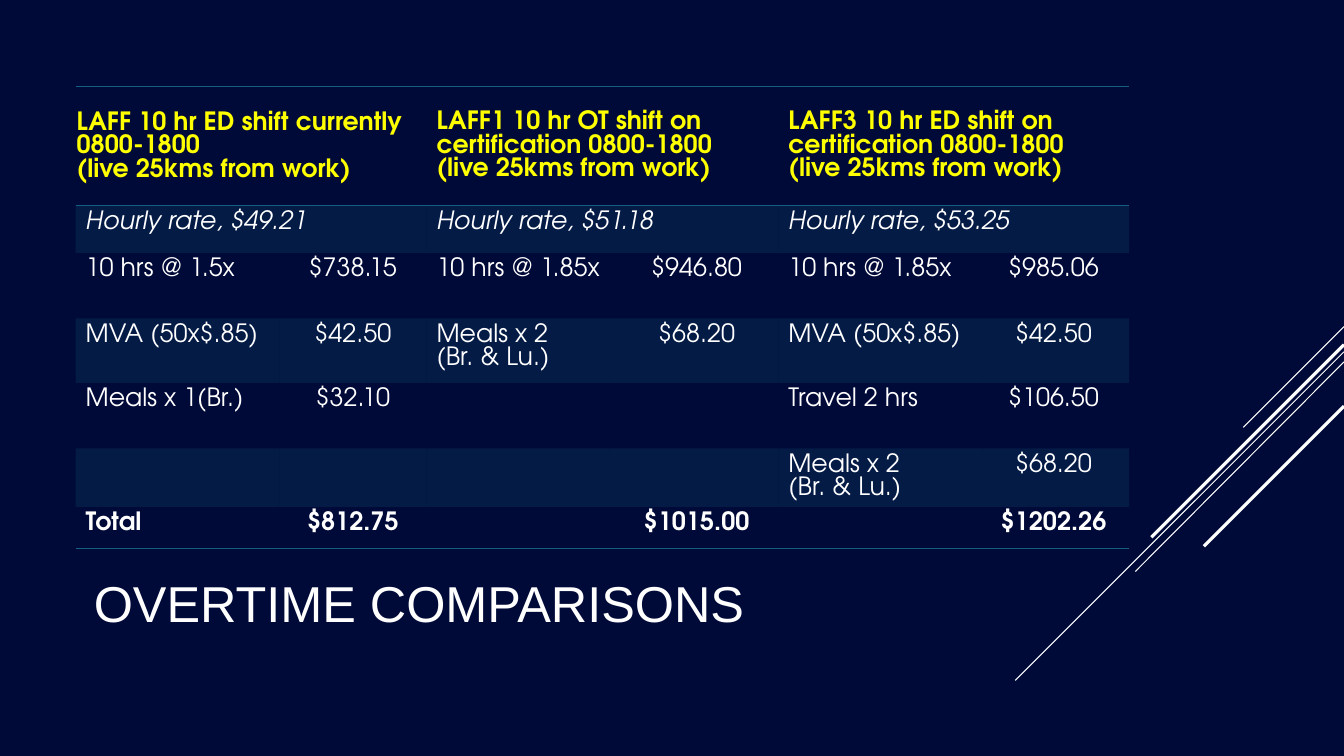
import pptx
import pptx.util
import pptx.dml.color
import pptx.enum.shapes
import pptx.enum.text
import pptx.oxml.ns
from lxml import etree

Inches, Pt = pptx.util.Inches, pptx.util.Pt
RGBColor = pptx.dml.color.RGBColor
ALIGN = pptx.enum.text.PP_ALIGN
MIDDLE = pptx.enum.text.MSO_ANCHOR.MIDDLE
qn = pptx.oxml.ns.qn

NAVY = RGBColor(0x00, 0x0A, 0x38)
WHITE = RGBColor(0xFF, 0xFF, 0xFF)
YELLOW = RGBColor(0xFF, 0xFF, 0x00)
TEAL = RGBColor(0x15, 0x60, 0x82)
NO_STYLE = "{2D5ABB26-0587-4C30-8999-92F81FD0307C}"

# Start, end and width of each diagonal line
DIAGONALS = [
    ((13.33, 3.24), (12.33, 4.24), 0.75),
    ((13.33, 3.49), (10.07, 6.75), 0.75),
    ((13.33, 3.59), (11.26, 5.67), 0.75),
    ((13.33, 3.42), (11.42, 5.33), 2.25),
    ((13.33, 4.03), (11.94, 5.42), 2.25),
]

COLUMN_WIDTHS = [2.02, 1.46, 1.87, 1.62, 1.98, 1.5]
ROW_HEIGHTS = [1.18, 0.47, 0.65, 0.64, 0.65, 0.58, 0.41]
DISTANCE = "(live 25kms from work)"
PAY_ROWS = [
    ["LAFF 10 hr ED shift currently 0800-1800 \n" + DISTANCE, "",
     "LAFF1 10 hr OT shift on certification 0800-1800 \n" + DISTANCE, "",
     "LAFF3 10 hr ED shift on certification 0800-1800 \n" + DISTANCE, ""],
    ["Hourly rate, $49.21", "", "Hourly rate, $51.18", "", "Hourly rate, $53.25", ""],
    ["10 hrs @ 1.5x", "$738.15", "10 hrs @ 1.85x", "$946.80", "10 hrs @ 1.85x", "$985.06"],
    ["MVA (50x$.85)", "$42.50", "Meals x 2 \n(Br. & Lu.)", "$68.20", "MVA (50x$.85)", "$42.50"],
    ["Meals x 1(Br.)", "$32.10", "", "", "Travel 2 hrs", "$106.50"],
    ["", "", "", "", "Meals x 2 \n(Br. & Lu.)", "$68.20"],
    ["Total", "$812.75", "", "$1015.00", "", "$1202.26"],
]
HEADER, RATE, TOTAL = 0, 1, len(PAY_ROWS) - 1


class SlideBuilder:
    title_font, table_font = "Arial", "TeX Gyre Adventor"
    title_size, table_size, line_pitch = Pt(36), Pt(18), Pt(16.8)

    def __init__(self, slide):
        self.slide = slide
        slide.background.fill.solid()
        slide.background.fill.fore_color.rgb = NAVY

    def add_text(self, paragraph, text, font, size, color, bold=False, italic=False):
        for index, line in enumerate(text.split("\n")):
            if index:
                paragraph.add_line_break()
            run = paragraph.add_run()
            run.text = line
            run.font.name, run.font.size = font, size
            run.font.bold, run.font.italic = bold, italic
            run.font.color.rgb = color

    def diagonal(self, start, end, width):
        line = self.slide.shapes.add_connector(
            pptx.enum.shapes.MSO_CONNECTOR.STRAIGHT,
            *(Inches(value) for value in start + end))
        line.line.color.rgb = WHITE
        line.line.width = Pt(width)
        etree.SubElement(line.element.spPr, qn("a:effectLst"))

    def title(self, text, left, top, width, height):
        heading = self.slide.shapes.title
        heading.left, heading.top = Inches(left), Inches(top)
        heading.width, heading.height = Inches(width), Inches(height)
        frame = heading.text_frame
        frame.word_wrap = True
        frame.vertical_anchor = MIDDLE
        frame.paragraphs[0].alignment = ALIGN.LEFT
        self.add_text(frame.paragraphs[0], text, self.title_font, self.title_size, WHITE)

    def band(self, cell):
        """Fill a cell with translucent teal."""
        cell.fill.solid()
        cell.fill.fore_color.rgb = TEAL
        color = next(cell._tc.tcPr.iter(qn("a:srgbClr")))
        etree.SubElement(color, qn("a:alpha"), val="20000")

    def border(self, cell, sides):
        properties = cell._tc.get_or_add_tcPr()
        for position, side in enumerate(sides):
            line = etree.Element(qn("a:ln" + side), w=str(Pt(1)))
            fill = etree.SubElement(line, qn("a:solidFill"))
            etree.SubElement(fill, qn("a:srgbClr"), val=str(TEAL))
            properties.insert(position, line)

    def pay_table(self, left, top):
        frame = self.slide.shapes.add_table(
            len(ROW_HEIGHTS), len(COLUMN_WIDTHS), Inches(left), Inches(top),
            Inches(sum(COLUMN_WIDTHS)), Inches(sum(ROW_HEIGHTS)))
        table = frame.table
        next(frame.element.iter(qn("a:tableStyleId"))).text = NO_STYLE
        table.first_row = table.horz_banding = False
        for column, width in zip(table.columns, COLUMN_WIDTHS):
            column.width = Inches(width)
        for row, height in zip(table.rows, ROW_HEIGHTS):
            row.height = Inches(height)

        for r, texts in enumerate(PAY_ROWS):
            for c, text in enumerate(texts):
                cell = table.cell(r, c)
                if r % 2:
                    self.band(cell)
                else:
                    cell.fill.background()
                if r in (HEADER, TOTAL):
                    self.border(cell, "TB" if r == HEADER else "B")
                if r == HEADER:
                    cell.vertical_anchor = MIDDLE
                if r in (HEADER, RATE) and c % 2 == 0:
                    cell.merge(table.cell(r, c + 1))
                if text:
                    paragraph = cell.text_frame.paragraphs[0]
                    paragraph.line_spacing = self.line_pitch
                    paragraph.alignment = ALIGN.CENTER if c % 2 else ALIGN.LEFT
                    self.add_text(paragraph, text, self.table_font, self.table_size,
                                  YELLOW if r == HEADER else WHITE,
                                  bold=r in (HEADER, TOTAL), italic=r == RATE)

        # The first heading sits tight against the table edge
        corner = table.cell(HEADER, 0)
        corner.margin_left = corner.margin_top = corner.margin_right = Inches(0.01)
        corner.margin_bottom = 0


def main():
    deck = pptx.Presentation()
    deck.slide_width, deck.slide_height = Inches(13.33), Inches(7.5)
    builder = SlideBuilder(deck.slides.add_slide(deck.slide_layouts[5]))

    # Decorative diagonals
    for start, end, width in DIAGONALS:
        builder.diagonal(start, end, width)

    # Title and comparison table
    builder.title("OVERTIME COMPARISONS", 0.83, 5.31, 9.33, 1.33)
    builder.pay_table(0.75, 0.86)

    deck.save("out.pptx")


if __name__ == "__main__":
    main()
